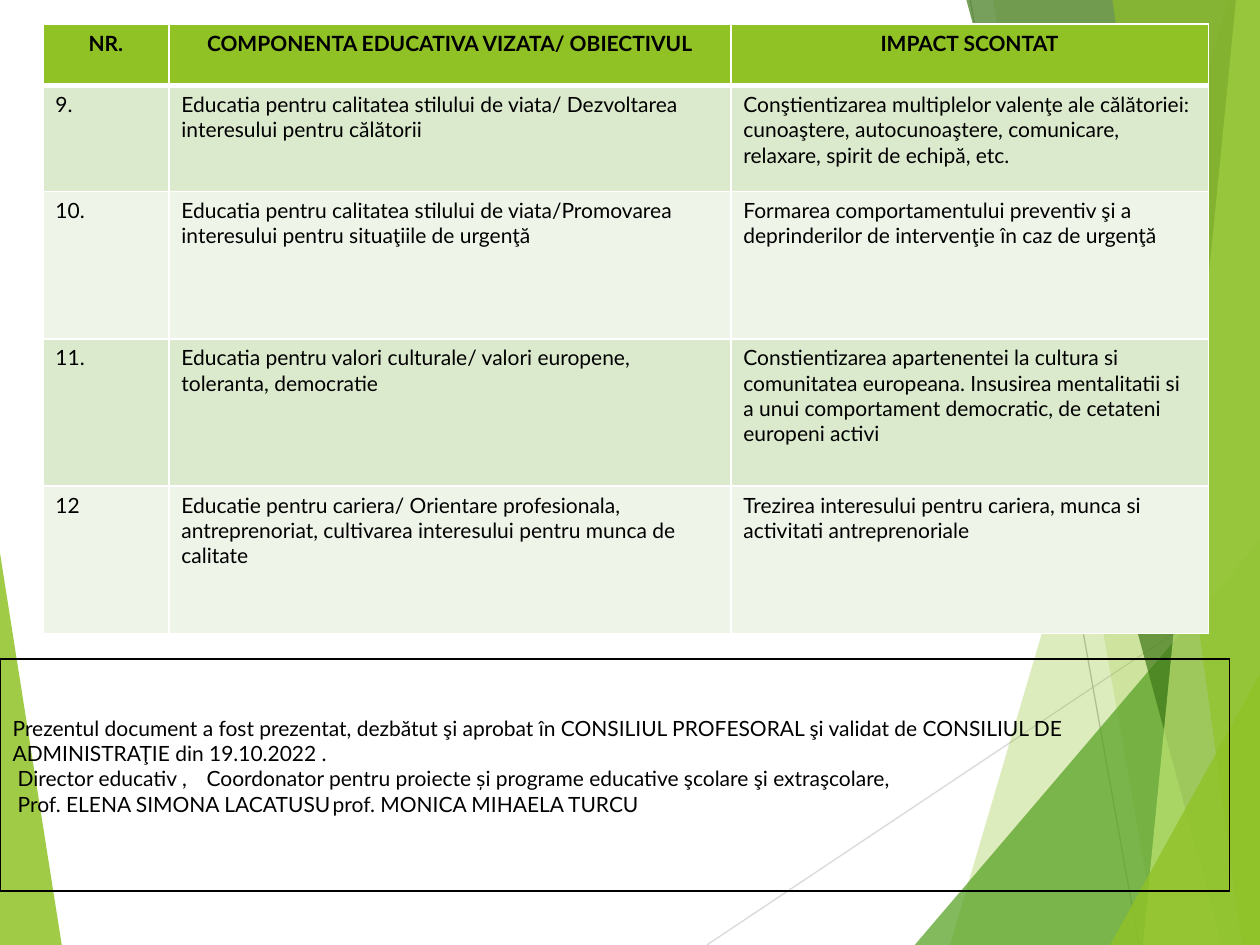
from dataclasses import dataclass

from lxml.etree import SubElement
from pptx import Presentation
from pptx.dml.color import RGBColor
from pptx.enum.shapes import MSO_CONNECTOR
from pptx.enum.text import PP_ALIGN
from pptx.oxml.ns import qn
from pptx.util import Inches, Pt


@dataclass(frozen=True)
class Theme:
    """Colours, font and type sizes of the slide."""

    font: str = "Lato"
    size: float = 12
    text: str = "000000"
    white: str = "FFFFFF"
    lime: str = "90C226"
    green: str = "54A021"
    forest: str = "3F7819"
    pale_lime: str = "C0E474"
    light_gray: str = "D9D9D9"
    gray: str = "BFBFBF"
    bands: tuple = ("DBE9CD", "EEF4E8")
    thin: float = 1
    thick: float = 3
    hairline: float = 0.75


class SlideBuilder:
    """Draws styled elements on the current slide."""

    def __init__(self, slide, theme):
        """Keep the slide and its theme."""
        self.slide = slide
        self.theme = theme

    def polygon(self, points, color, opacity):
        """Draw a translucent filled outline."""
        corners = [(Inches(x), Inches(y)) for x, y in points]
        builder = self.slide.shapes.build_freeform(*corners[0])
        builder.add_line_segments(corners[1:], close=True)
        shape = builder.convert_to_shape()
        shape.shadow.inherit = False
        shape.fill.solid()
        shape.fill.fore_color.rgb = RGBColor.from_string(color)
        shape.line.fill.background()
        fill_color = shape.element.spPr.find(qn("a:solidFill")).find(qn("a:srgbClr"))
        SubElement(fill_color, qn("a:alpha"), val=str(opacity * 1000))

    def line(self, start, end, color):
        """Draw a thin straight line."""
        ends = [Inches(value) for value in (*start, *end)]
        connector = self.slide.shapes.add_connector(MSO_CONNECTOR.STRAIGHT, *ends)
        connector.line.color.rgb = RGBColor.from_string(color)
        connector.line.width = Pt(self.theme.hairline)
        SubElement(connector.element.spPr, qn("a:effectLst"))

    def table(self, left, top, columns, rows):
        """Add an unbanded table with the given column widths and row heights."""
        frame = self.slide.shapes.add_table(
            len(rows), len(columns), Inches(left), Inches(top),
            Inches(sum(columns)), Inches(sum(rows)))
        table = frame.table
        table.first_row = table.horz_banding = False
        for column, width in zip(table.columns, columns):
            column.width = Inches(width)
        for row, height in zip(table.rows, rows):
            row.height = Inches(height)
        return table

    def cell(self, cell, text, border, fill=None, bold=False, align=PP_ALIGN.LEFT,
             top_width=None, bottom_width=None):
        """Fill in one table cell with text, borders and background."""
        thin = self.theme.thin
        widths = {"L": thin, "R": thin, "T": top_width or thin, "B": bottom_width or thin}
        properties = cell._tc.get_or_add_tcPr()
        for side, width in widths.items():
            edge = SubElement(properties, qn(f"a:ln{side}"), w=str(Pt(width)))
            SubElement(SubElement(edge, qn("a:solidFill")), qn("a:srgbClr"), val=border)
        if fill:
            cell.fill.solid()
            cell.fill.fore_color.rgb = RGBColor.from_string(fill)
        else:
            cell.fill.background()
        cell.text_frame.text = text
        for paragraph in cell.text_frame.paragraphs:
            paragraph.alignment = align
            for run in paragraph.runs:
                run.font.name = self.theme.font
                run.font.size = Pt(self.theme.size)
                run.font.bold = bold
                run.font.color.rgb = RGBColor.from_string(self.theme.text)

    def tab_stop(self, paragraph, indent, position):
        """Indent a paragraph and give it one left tab stop."""
        properties = paragraph._p.get_or_add_pPr()
        properties.set("marL", str(Inches(indent)))
        properties.set("indent", "0")
        stops = SubElement(properties, qn("a:tabLst"))
        SubElement(stops, qn("a:tab"), pos=str(Inches(position)), algn="l")


HEADINGS = ("NR.", "COMPONENTA EDUCATIVA VIZATA/ OBIECTIVUL", "IMPACT SCONTAT")
OBJECTIVES = (
    ("9.",
     "Educatia pentru calitatea stilului de viata/ Dezvoltarea interesului pentru călătorii",
     "Conştientizarea multiplelor valenţe ale călătoriei: cunoaştere, autocunoaştere, "
     "comunicare, relaxare, spirit de echipă, etc."),
    ("10.",
     "Educatia pentru calitatea stilului de viata/Promovarea interesului pentru "
     "situaţiile de urgenţă",
     "Formarea comportamentului preventiv şi a deprinderilor de intervenţie în caz de urgenţă"),
    ("11.",
     "Educatia pentru valori culturale/ valori europene, toleranta, democratie",
     "Constientizarea apartenentei la cultura si comunitatea europeana. Insusirea "
     "mentalitatii si a unui comportament democratic, de cetateni europeni activi"),
    ("12",
     "Educatie pentru cariera/ Orientare profesionala, antreprenoriat, cultivarea "
     "interesului pentru munca de calitate",
     "Trezirea interesului pentru cariera, munca si activitati antreprenoriale"),
)
APPROVAL = (
    "Prezentul document a fost prezentat, dezbătut şi aprobat în CONSILIUL PROFESORAL "
    "şi validat de CONSILIUL DE ADMINISTRAŢIE din 19.10.2022 .",
    "Director educativ ,\tCoordonator pentru proiecte și programe educative şcolare "
    "şi extraşcolare,",
    "Prof. ELENA SIMONA LACATUSU\tprof. MONICA MIHAELA TURCU",
)


def draw_background(builder):
    """Draw the green facets and the two crossing lines."""
    theme = builder.theme
    builder.polygon([(0, 4.39), (0.49, 7.5), (0, 7.5)], theme.lime, 85)
    builder.line((5.61, 7.5), (10, 4.57), theme.light_gray)
    builder.line((7.7, 0), (9.04, 7.5), theme.gray)
    facets = (
        (9.75, 0, 7.54, theme.lime, 30),
        (7.88, 0, 9.19, theme.lime, 20),
        (10, 4.29, 7.26, theme.green, 72),
        (7.67, 0, 9.7, theme.forest, 70),
        (9.81, 0, 9.07, theme.pale_lime, 70),
        (8.83, 0, 9.86, theme.lime, 65),
        (10, 5.35, 8.81, theme.lime, 80),
    )
    for top_x, top_y, bottom_x, color, opacity in facets:
        corners = [(top_x, top_y), (bottom_x, 7.5), (10, 7.5)]
        if top_x < 10:
            corners.append((10, top_y))
        builder.polygon(corners, color, opacity)


def draw_objectives(builder):
    """Draw the table of objectives and expected impact."""
    theme = builder.theme
    table = builder.table(0.34, 0.19, (1, 4.46, 3.79), (0.49, 0.84, 1.17, 1.17, 1.17))
    for column, heading in enumerate(HEADINGS):
        builder.cell(table.cell(0, column), heading, theme.white, theme.lime, bold=True,
                     align=PP_ALIGN.CENTER, bottom_width=theme.thick)
    for row, texts in enumerate(OBJECTIVES, start=1):
        top_width = theme.thick if row == 1 else theme.thin
        for column, text in enumerate(texts):
            builder.cell(table.cell(row, column), text, theme.white,
                         theme.bands[(row - 1) % 2], top_width=top_width)


def draw_approval(builder):
    """Draw the framed approval note with its two signatures."""
    cell = builder.table(0, 5.23, (9.76,), (1.84,)).cell(0, 0)
    builder.cell(cell, "\n".join(APPROVAL), builder.theme.text)
    cell.margin_top = Inches(0.45)
    for paragraph, position in zip(cell.text_frame.paragraphs[1:], (2.97, 4.79)):
        builder.tab_stop(paragraph, 0.04, position)


def main():
    """Build and save the presentation."""
    presentation = Presentation()
    presentation.slide_width, presentation.slide_height = Inches(10), Inches(7.5)
    slide = presentation.slides.add_slide(presentation.slide_layouts[6])
    builder = SlideBuilder(slide, Theme())
    draw_background(builder)
    draw_objectives(builder)
    draw_approval(builder)
    presentation.save("out.pptx")


if __name__ == "__main__":
    main()
